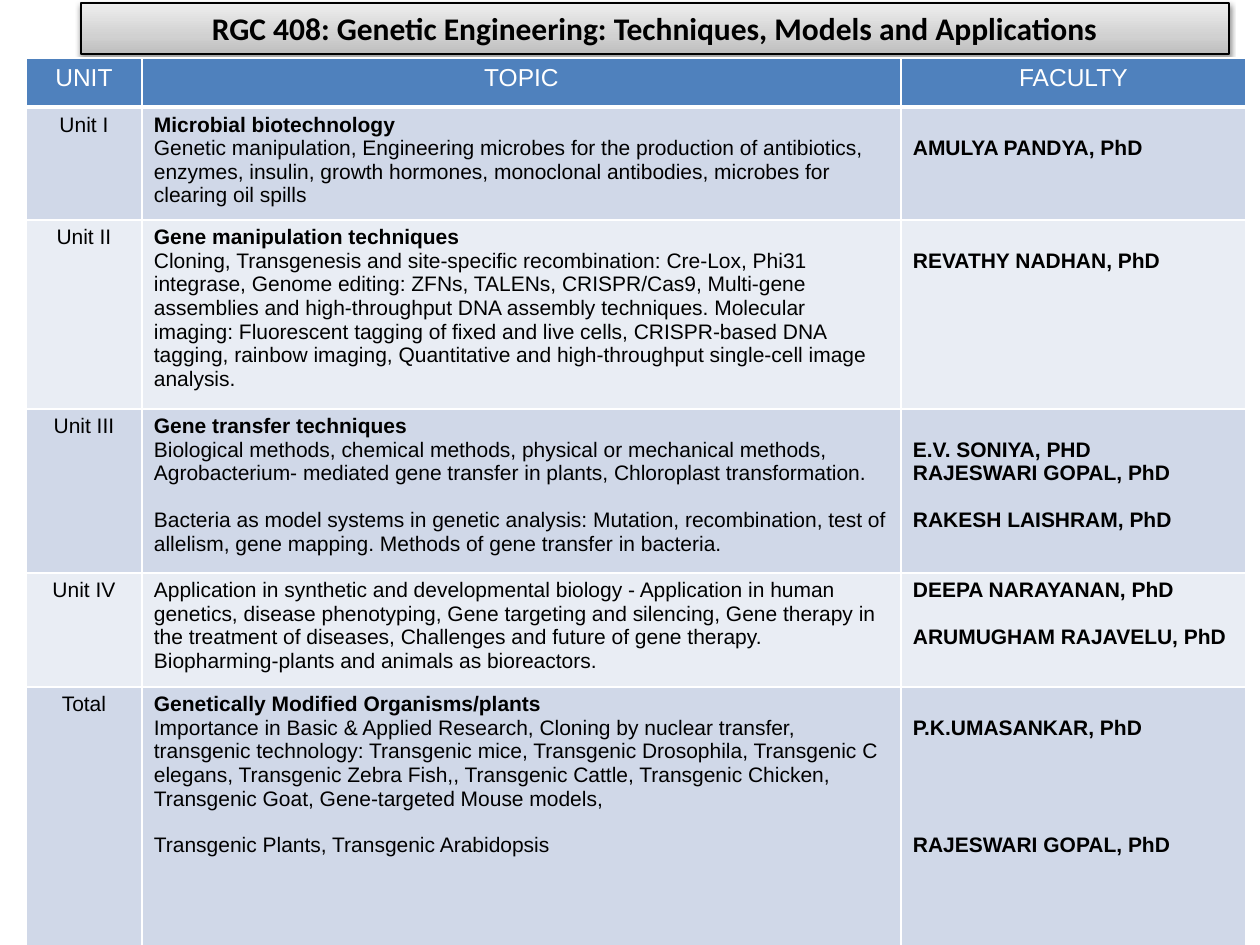
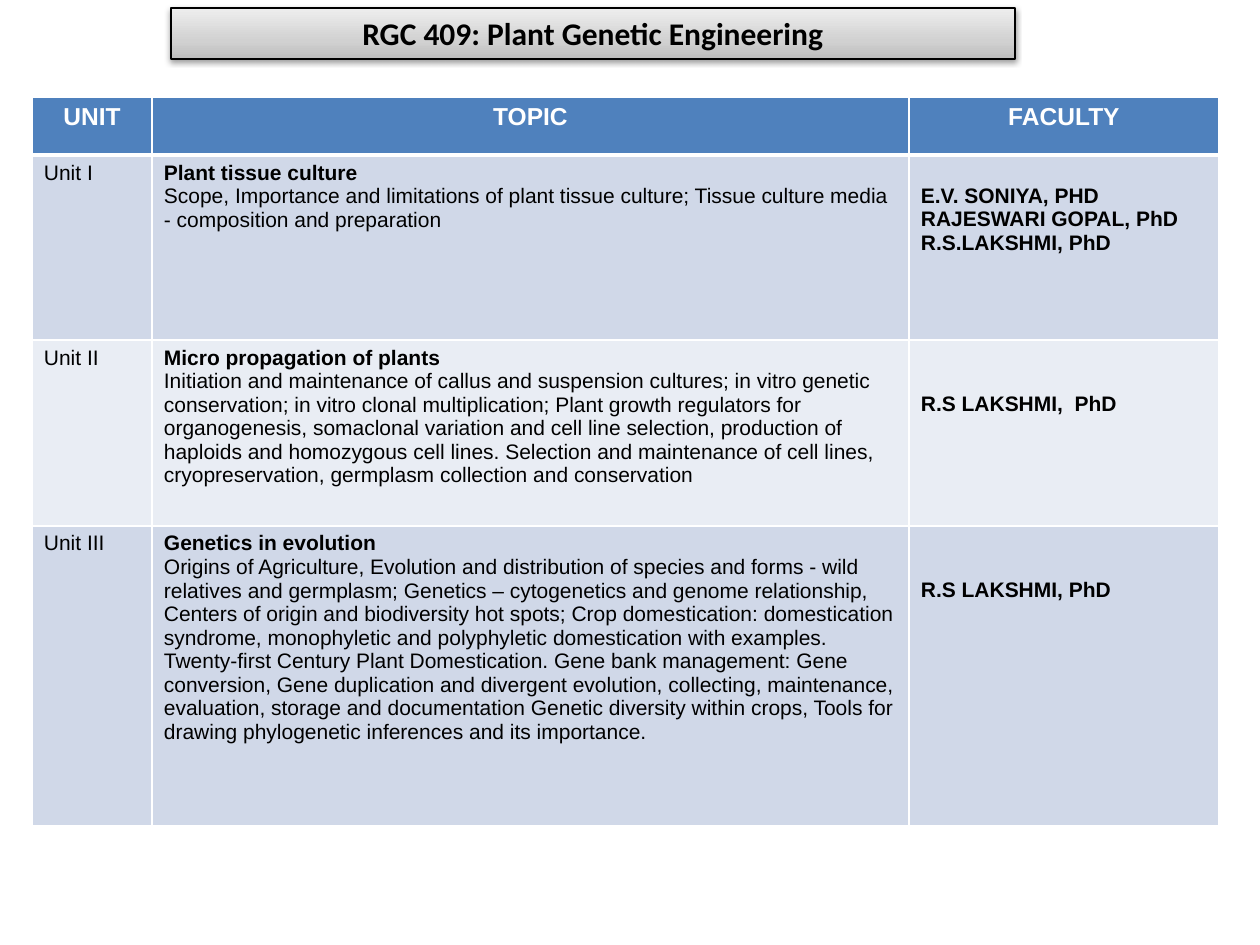
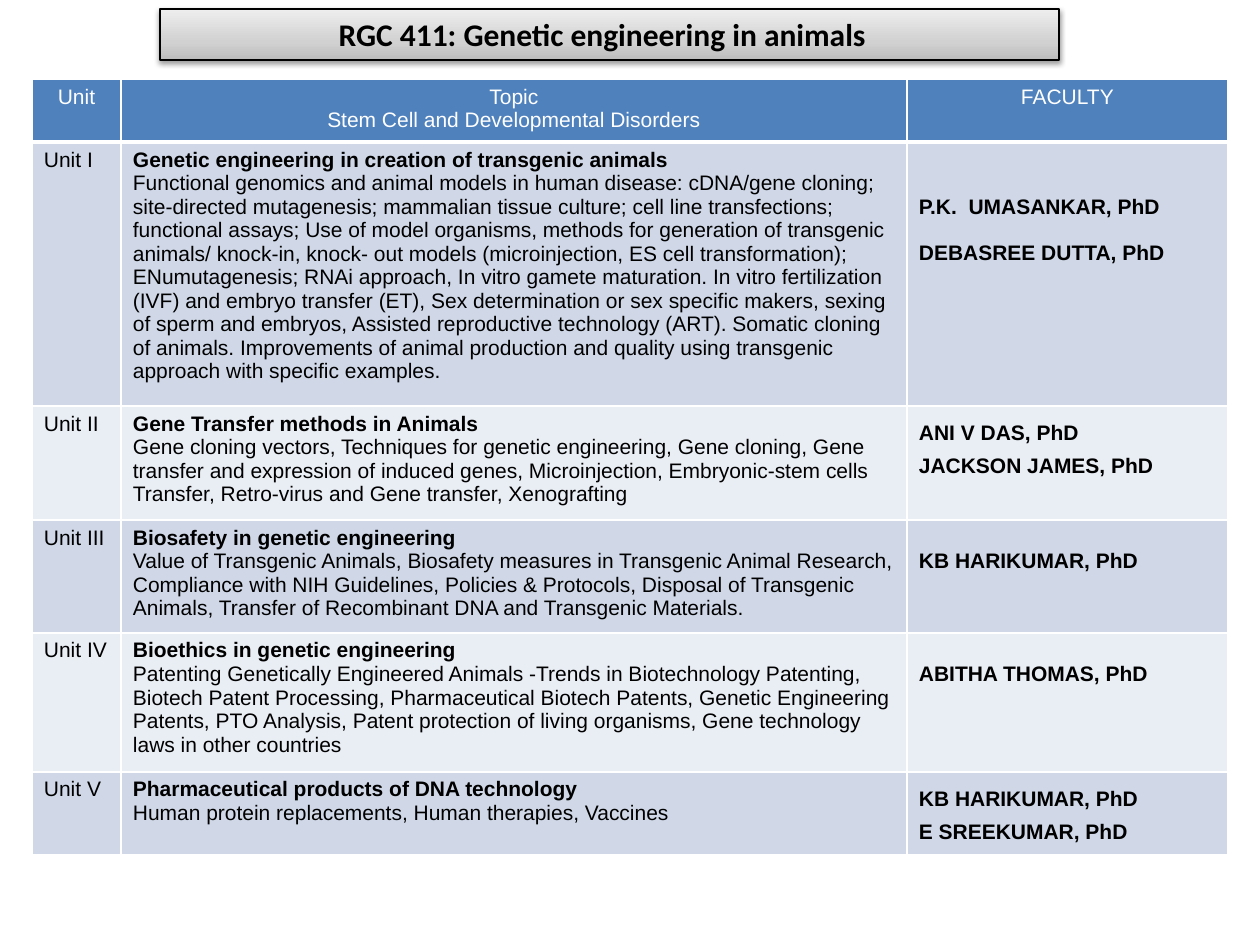
import collections
import dataclasses

import lxml.etree
import pptx
import pptx.dml.color
import pptx.enum.shapes
import pptx.enum.text
import pptx.oxml
import pptx.oxml.ns
import pptx.util

Unit = collections.namedtuple("Unit", "label heading topics faculty spacing", defaults=[1.0])
Course = collections.namedtuple(
    "Course", "title banner trailing corner columns rows header header_size header_bold label_align units")

CENTER = pptx.enum.text.PP_ALIGN.CENTER
LEFT = pptx.enum.text.PP_ALIGN.LEFT

COURSES = [
    Course(
        "RGC 408: Genetic Engineering: Techniques, Models and Applications",
        (81, 3, 1148, 51), 0, (26, 58), (116, 759, 345), (49, 113, 189, 164, 114, 264),
        (["UNIT"], ["TOPIC"], ["FACULTY"]), 14, False, CENTER,
        [
            Unit("Unit I", "Microbial biotechnology",
                 [(0, "Genetic manipulation, Engineering microbes for the production of antibiotics, enzymes, insulin, growth hormones, monoclonal antibodies, microbes for clearing oil spills")],
                 [(1, "AMULYA PANDYA, PhD")]),
            Unit("Unit II", "Gene manipulation techniques",
                 [(0, "Cloning, Transgenesis and site-specific recombination: Cre-Lox, Phi31 integrase, Genome editing: ZFNs, TALENs, CRISPR/Cas9, Multi-gene assemblies and high-throughput DNA assembly techniques. Molecular imaging: Fluorescent tagging of fixed and live cells, CRISPR-based DNA tagging, rainbow imaging, Quantitative and high-throughput single-cell image analysis.")],
                 [(1, "REVATHY NADHAN, PhD")]),
            Unit("Unit III", "Gene transfer techniques",
                 [(0, "Biological methods, chemical methods, physical or mechanical methods, Agrobacterium- mediated gene transfer in plants, Chloroplast transformation."),
                  (1, "Bacteria as model systems in genetic analysis: Mutation, recombination, test of allelism, gene mapping. Methods of gene transfer in bacteria.")],
                 [(1, "E.V. SONIYA, PHD"), (0, "RAJESWARI GOPAL, PhD"), (1, "RAKESH LAISHRAM, PhD")]),
            Unit("Unit IV", None,
                 [(0, "Application in synthetic and developmental biology - Application in human genetics, disease phenotyping, Gene targeting and silencing, Gene therapy in the treatment of diseases, Challenges and future of gene therapy. Biopharming-plants and animals as bioreactors.")],
                 [(0, "DEEPA NARAYANAN, PhD"), (1, "ARUMUGHAM RAJAVELU, PhD")]),
            Unit("Total", "Genetically Modified Organisms/plants",
                 [(0, "Importance in Basic & Applied Research, Cloning by nuclear transfer, transgenic technology: Transgenic mice, Transgenic Drosophila, Transgenic C elegans, Transgenic Zebra Fish,, Transgenic Cattle, Transgenic Chicken, Transgenic Goat, Gene-targeted Mouse models,"),
                  (1, "Transgenic Plants, Transgenic Arabidopsis")],
                 [(1, "P.K.UMASANKAR, PhD"), (4, "RAJESWARI GOPAL, PhD")]),
        ]),
    Course(
        "RGC 409: Plant Genetic Engineering",
        (171, 8, 844, 51), 0, (32, 97), (120, 757, 310), (58, 185, 186, 300),
        (["UNIT"], ["TOPIC"], ["FACULTY"]), 14, True, LEFT,
        [
            Unit("Unit I", "Plant tissue culture",
                 [(0, "Scope, Importance and limitations of plant tissue culture; Tissue culture media - composition and preparation")],
                 [(1, "E.V. SONIYA, PHD"), (0, "RAJESWARI GOPAL, PhD"), (0, "R.S.LAKSHMI, PhD")]),
            Unit("Unit II", "Micro propagation of plants",
                 [(0, "Initiation and maintenance of callus and suspension cultures; in vitro genetic conservation; in vitro clonal multiplication; Plant growth regulators for organogenesis, somaclonal variation and cell line selection, production of haploids and homozygous cell lines. Selection and maintenance of cell lines, cryopreservation, germplasm collection and conservation")],
                 [(2, "R.S LAKSHMI,  PhD")]),
            Unit("Unit III", "Genetics in evolution",
                 [(0, "Origins of Agriculture, Evolution and distribution of species and forms - wild relatives and germplasm; Genetics – cytogenetics and genome relationship, Centers of origin and biodiversity hot spots; Crop domestication: domestication syndrome, monophyletic and polyphyletic domestication with examples. Twenty-first Century Plant Domestication. Gene bank management: Gene conversion, Gene duplication and divergent evolution, collecting, maintenance, evaluation, storage and documentation Genetic diversity within crops, Tools for drawing phylogenetic inferences and its importance.")],
                 [(2, "R.S LAKSHMI, PhD")]),
        ]),
    Course(
        "RGC 411: Genetic engineering in animals",
        (160, 9, 899, 51), 14, (32, 79), (89, 786, 321), (63, 264, 114, 113, 139, 83),
        (["Unit"], ["Topic", "Stem Cell and Developmental Disorders"], ["FACULTY"]), 12, False, LEFT,
        [
            Unit("Unit I", "Genetic engineering in creation of transgenic animals",
                 [(0, "Functional genomics and animal models in human disease: cDNA/gene cloning; site-directed mutagenesis; mammalian tissue culture; cell line transfections; functional assays; Use of model organisms, methods for generation of transgenic animals/ knock-in, knock- out models (microinjection, ES cell transformation); ENumutagenesis; RNAi approach, In vitro gamete maturation. In vitro fertilization (IVF) and embryo transfer (ET), Sex determination or sex specific makers, sexing of sperm and embryos, Assisted reproductive technology (ART). Somatic cloning of animals. Improvements of animal production and quality using transgenic approach with specific examples.")],
                 [(2, "P.K.  UMASANKAR, PhD"), (1, "DEBASREE DUTTA, PhD")]),
            Unit("Unit II", "Gene Transfer methods in Animals",
                 [(0, "Gene cloning vectors, Techniques for genetic engineering, Gene cloning, Gene transfer and expression of induced genes, Microinjection, Embryonic-stem cells Transfer, Retro-virus and Gene transfer, Xenografting")],
                 [(0, "ANI V DAS, PhD"), (0, "JACKSON JAMES, PhD")], 1.4),
            Unit("Unit III", "Biosafety in genetic engineering",
                 [(0, "Value of Transgenic Animals, Biosafety measures in Transgenic Animal Research, Compliance with NIH Guidelines, Policies & Protocols, Disposal of Transgenic Animals, Transfer of Recombinant DNA and Transgenic Materials.")],
                 [(1, "KB HARIKUMAR, PhD")]),
            Unit("Unit IV", "Bioethics in genetic engineering",
                 [(0, "Patenting Genetically Engineered Animals -Trends in Biotechnology Patenting, Biotech Patent Processing, Pharmaceutical Biotech Patents, Genetic Engineering Patents, PTO Analysis, Patent protection of living organisms, Gene technology laws in other countries")],
                 [(1, "ABITHA THOMAS, PhD")]),
            Unit("Unit V", "Pharmaceutical products of DNA technology",
                 [(0, "Human protein replacements, Human therapies, Vaccines")],
                 [(0, "KB HARIKUMAR, PhD"), (0, "E SREEKUMAR, PhD")], 1.4),
        ]),
]


@dataclasses.dataclass(frozen=True)
class Theme:
    ink: str = "000000"
    paper: str = "FFFFFF"
    header: str = "4F81BD"
    bands: tuple = ("D0D8E8", "E9EDF4")
    banner: tuple = ((0, "BDBDBD"), (35, "D1D1D1"), (100, "EEEEEE"))
    title_font: str = "Calibri"
    body_font: str = "Arial"
    title_size: int = 18
    body_size: int = 12
    body_line: float = 13.4
    banner_line: float = 0.75
    grid_line: int = 1
    header_line: int = 3


THEME = Theme()


def px(length):
    return round(length * 914400 / 126)


def rgb(value):
    return pptx.dml.color.RGBColor.from_string(value)


def assign(target, formats):
    for name, value in formats.items():
        setattr(target, name, value)


def add_node(parent, tag, **attributes):
    return lxml.etree.SubElement(
        parent, pptx.oxml.ns.qn(tag), {name: str(value) for name, value in attributes.items()})


def write(paragraph, text, color, font, formats):
    run = paragraph.add_run()
    run.text = text
    assign(run.font, font)
    run.font.color.rgb = rgb(color)
    assign(paragraph, formats)


def draw_banner(slide, course):
    banner = slide.shapes.add_shape(
        pptx.enum.shapes.MSO_SHAPE.RECTANGLE, *map(px, course.banner))
    banner.fill.gradient()
    banner.fill.gradient_angle = 90
    stops = banner.element.spPr.find(".//" + pptx.oxml.ns.qn("a:gsLst"))
    for stop in list(stops):
        stops.remove(stop)
    for position, color in THEME.banner:
        add_node(add_node(stops, "a:gs", pos=position * 1000), "a:srgbClr", val=color)
    banner.line.color.rgb = rgb(THEME.ink)
    banner.line.width = pptx.util.Pt(THEME.banner_line)
    banner.shadow.inherit = False
    effects = banner.element.spPr.find(pptx.oxml.ns.qn("a:effectLst"))
    shadow = add_node(effects, "a:outerShdw", blurRad=40000, dist=20000, dir=5400000, rotWithShape=0)
    add_node(add_node(shadow, "a:srgbClr", val=THEME.ink), "a:alpha", val=38000)
    frame = banner.text_frame
    assign(frame, dict(
        word_wrap=True, margin_left=px(13), margin_right=px(13 + course.trailing),
        auto_size=pptx.enum.text.MSO_AUTO_SIZE.SHAPE_TO_FIT_TEXT,
        vertical_anchor=pptx.enum.text.MSO_ANCHOR.TOP))
    write(frame.paragraphs[0], course.title, THEME.ink,
          dict(name=THEME.title_font, size=pptx.util.Pt(THEME.title_size), bold=True),
          dict(alignment=CENTER))


def draw_borders(cell, bottom):
    properties = cell._tc.get_or_add_tcPr()
    widths = dict.fromkeys(("a:lnL", "a:lnR", "a:lnT"), THEME.grid_line) | {"a:lnB": bottom}
    for tag, width in widths.items():
        border = add_node(properties, tag, w=pptx.util.Pt(width))
        add_node(add_node(border, "a:solidFill"), "a:srgbClr", val=THEME.paper)


def fill_cell(cell, fill, lines, color, size, align, spacing=1.0, bottom=THEME.grid_line):
    draw_borders(cell, bottom)
    cell.fill.solid()
    cell.fill.fore_color.rgb = rgb(fill)
    line_height = pptx.util.Pt(THEME.body_line)
    assign(cell, dict(margin_left=px(12), margin_right=px(12), margin_bottom=px(6),
                      margin_top=px(6) + lines[0][0] * line_height))
    frame = cell.text_frame
    for index, (gap, text, bold) in enumerate(lines):
        paragraph = frame.add_paragraph() if index else frame.paragraphs[0]
        formats = dict(alignment=align, line_spacing=spacing)
        if index and gap:
            formats["space_before"] = gap * line_height
        write(paragraph, text, color,
              dict(name=THEME.body_font, size=pptx.util.Pt(size), bold=bold), formats)


def draw_syllabus(slide, course):
    syllabus = slide.shapes.add_table(
        len(course.rows), len(course.columns), *map(px, course.corner),
        px(sum(course.columns)), px(sum(course.rows))).table
    for column, width in zip(syllabus.columns, course.columns):
        column.width = px(width)
    for row, height in zip(syllabus.rows, course.rows):
        row.height = px(height)
    for index, names in enumerate(course.header):
        fill_cell(syllabus.cell(0, index), THEME.header,
                  [(0, name, course.header_bold) for name in names],
                  THEME.paper, course.header_size, CENTER, bottom=THEME.header_line)
    for index, unit in enumerate(course.units):
        heading = [(0, unit.heading, True)] if unit.heading else []
        topics = heading + [(gap, topic, False) for gap, topic in unit.topics]
        faculty = [(gap, name, True) for gap, name in unit.faculty]
        parts = (([(0, unit.label, False)], course.label_align, 1.0),
                 (topics, LEFT, 1.0),
                 (faculty, LEFT, unit.spacing))
        for column, (lines, align, spacing) in enumerate(parts):
            fill_cell(syllabus.cell(index + 1, column), THEME.bands[index % 2], lines,
                      THEME.ink, THEME.body_size, align, spacing)


def main():
    deck = pptx.Presentation()
    assign(deck, dict(slide_width=px(1260), slide_height=px(945)))
    for course in COURSES:
        slide = deck.slides.add_slide(deck.slide_layouts[6])
        draw_banner(slide, course)
        draw_syllabus(slide, course)
    deck.save("out.pptx")


if __name__ == "__main__":
    main()
